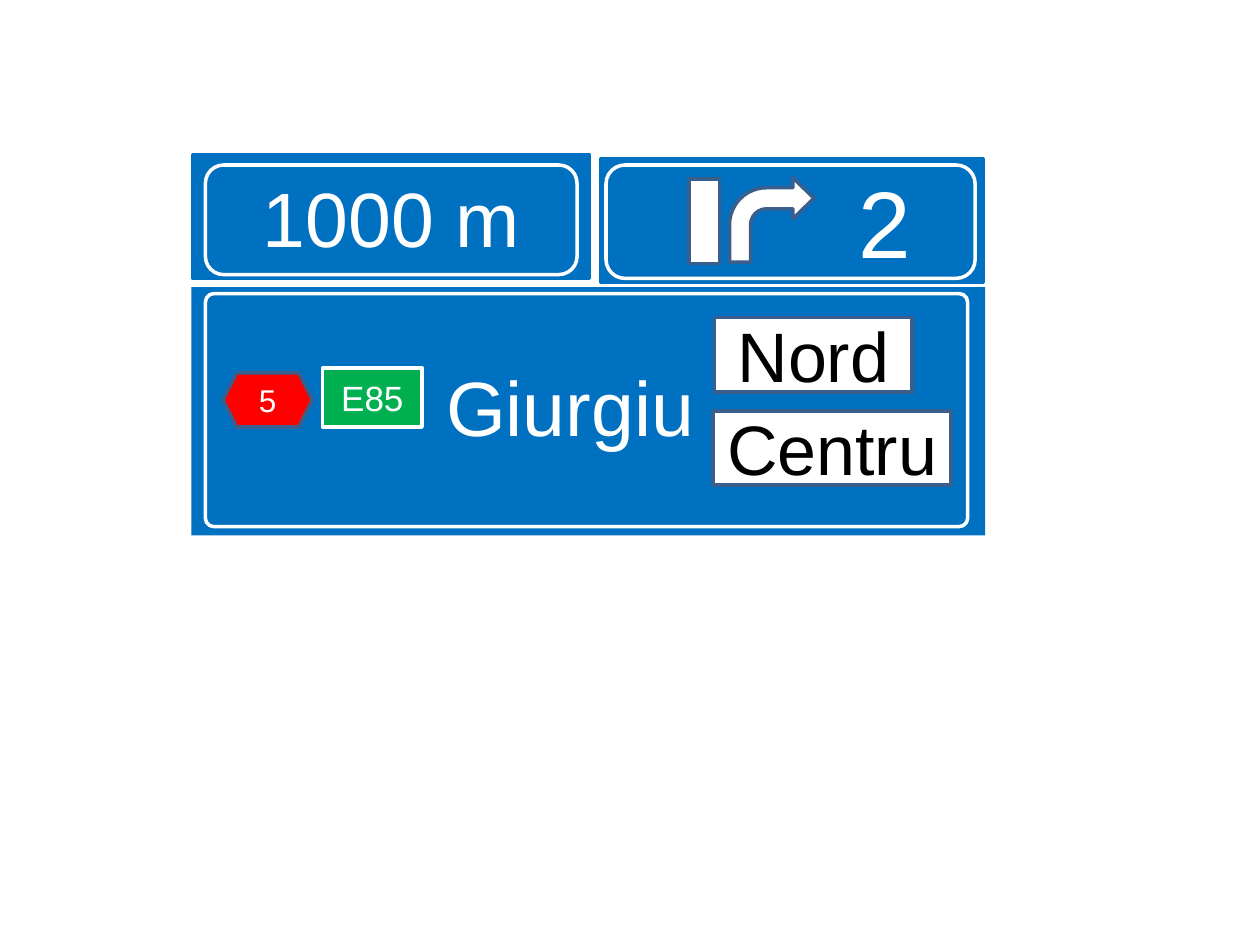
"""Build a slide showing a Romanian motorway exit sign for Giurgiu."""
from pptx import Presentation
from pptx.dml.color import RGBColor
from pptx.enum.shapes import MSO_SHAPE
from pptx.enum.text import MSO_ANCHOR, PP_ALIGN
from pptx.util import Inches, Pt

RECTANGLE = MSO_SHAPE.RECTANGLE
ROUNDED = MSO_SHAPE.ROUNDED_RECTANGLE
HEXAGON = MSO_SHAPE.HEXAGON
BENT_ARROW = MSO_SHAPE.BENT_ARROW
TOP, MIDDLE = MSO_ANCHOR.TOP, MSO_ANCHOR.MIDDLE
LEFT, CENTER = PP_ALIGN.LEFT, PP_ALIGN.CENTER

BLUE, WHITE, BLACK = "0070C0", "FFFFFF", "000000"
RED, GREEN, EDGE = "FF0000", "00B050", "3A5F8C"

prs = Presentation()
prs.slide_width, prs.slide_height = Inches(10), Inches(7.5)
slide = prs.slides.add_slide(prs.slide_layouts[6])


def add_part(kind, box, fill, line, adjustments=()):
    part = slide.shapes.add_shape(kind, *[Inches(length) for length in box])
    part.shadow.inherit = False
    for color, target in ((fill, part.fill), (line, part.line.fill)):
        if color:
            target.solid()
            target.fore_color.rgb = RGBColor.from_string(color)
        else:
            target.background()
    if line:
        part.line.width = Pt(2)
    for index, value in enumerate(adjustments):
        part.adjustments[index] = value
    return part


def add_label(part, text, size, color=WHITE, align=CENTER, anchor=MIDDLE):
    frame = part.text_frame
    frame.text = text
    frame.word_wrap = True
    frame.vertical_anchor = anchor
    paragraph = frame.paragraphs[0]
    paragraph.alignment = align
    font = paragraph.runs[0].font
    font.name, font.size = "Arial", Pt(size)
    font.color.rgb = RGBColor.from_string(color)


destination = add_part(RECTANGLE, (1.52, 2.28, 6.3, 1.97), BLUE, None)
add_label(destination, "Giurgiu", 44, align=LEFT, anchor=TOP)
destination.text_frame.margin_left = Inches(2.02)
destination.text_frame.margin_top = Inches(0.57)
add_part(ROUNDED, (1.63, 2.33, 6.05, 1.85), None, WHITE, [0.037])

exit_panel = add_part(ROUNDED, (4.77, 1.26, 3.03, 0.98), BLUE, BLUE, [0])
add_label(exit_panel, "2", 54)
exit_panel.text_frame.margin_left = Inches(1.57)
add_part(RECTANGLE, (5.47, 1.42, 0.24, 0.67), WHITE, EDGE)
add_part(BENT_ARROW, (5.79, 1.41, 0.67, 0.67), WHITE, EDGE, [0.25, 0.245, 0.25, 0.438])
add_part(ROUNDED, (4.81, 1.31, 2.93, 0.9), None, WHITE)

distance = add_part(ROUNDED, (1.53, 1.23, 3.15, 0.98), BLUE, BLUE, [0])
add_label(distance, "1000 m", 44)
add_part(ROUNDED, (1.63, 1.31, 2.95, 0.87), None, WHITE)

plates = [
    ("5", HEXAGON, (1.77, 2.96, 0.71, 0.43), RED, EDGE, 18, WHITE),
    ("Nord", RECTANGLE, (5.67, 2.52, 1.57, 0.59), WHITE, EDGE, 40, BLACK),
    ("Centru", RECTANGLE, (5.66, 3.26, 1.89, 0.59), WHITE, EDGE, 40, BLACK),
    ("E85", RECTANGLE, (2.56, 2.92, 0.79, 0.47), GREEN, WHITE, 20, WHITE),
]
for text, kind, box, fill, line, size, color in plates:
    add_label(add_part(kind, box, fill, line), text, size, color)

prs.save("out.pptx")
